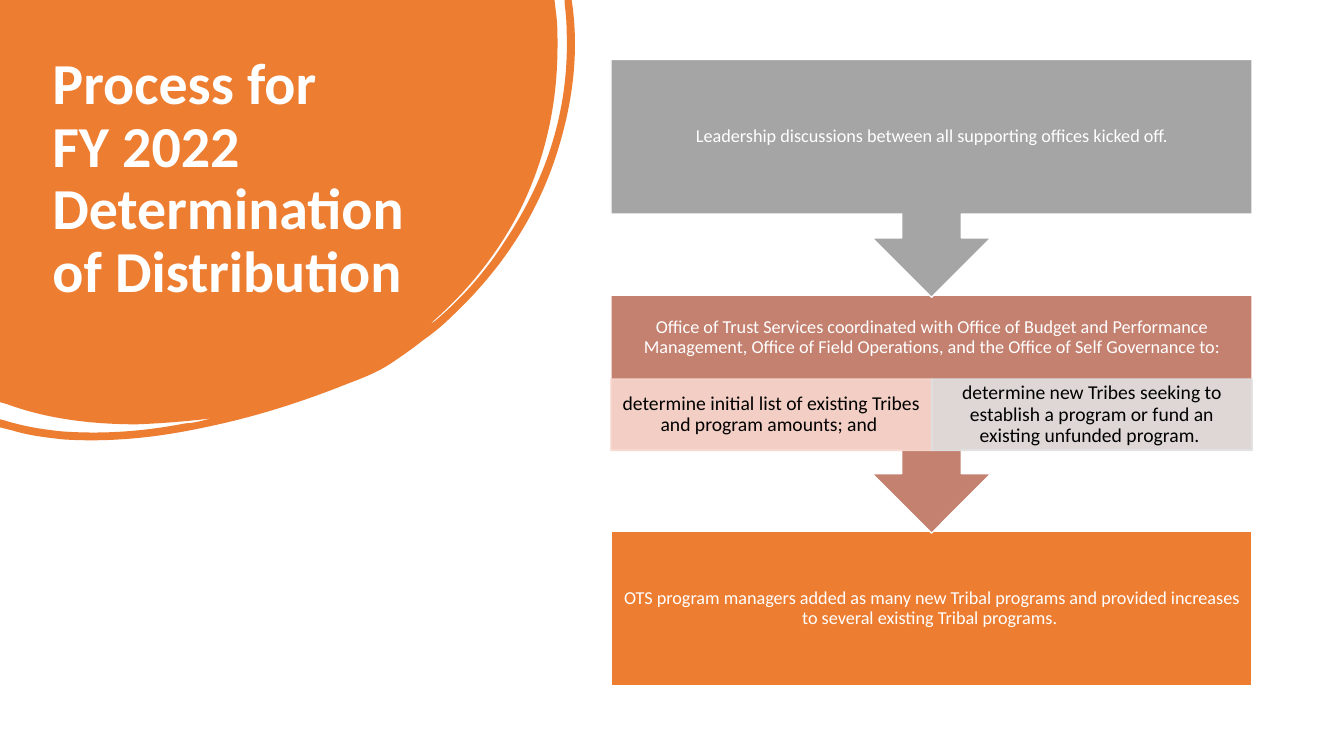
from dataclasses import dataclass

from lxml.etree import SubElement
from pptx import Presentation
from pptx.dml.color import RGBColor
from pptx.enum.shapes import MSO_SHAPE as Shape
from pptx.enum.text import MSO_ANCHOR as Anchor, MSO_AUTO_SIZE as AutoSize, PP_ALIGN as Align
from pptx.oxml.ns import qn
from pptx.util import Inches, Pt

TITLE = "Process for \vFY 2022 \vDetermination of Distribution"
# Each step: wording, colour name, details as (wording, colour name)
STEPS = [
    ("Leadership discussions between all supporting offices kicked off.", "gray", []),
    ("Office of Trust Services coordinated with Office of Budget and Performance "
     "Management, Office of Field Operations, and the Office of Self Governance to:", "rust", [
         ("determine initial list of existing Tribes and program amounts; and ", "pale_rust"),
         ("determine new Tribes seeking to establish a program or fund an existing "
          "unfunded program. ", "pale_gray")]),
    ("OTS program managers added as many new Tribal programs and provided increases "
     "to several existing Tribal programs. ", "orange", []),
]
# Outline of the corner blob: a pair is a line end, six numbers are a Bézier curve
BLOB_SIZE = (5.71, 4.37)
BLOB = [
    (0, 0), (5.5, 0), (5.52, 0.17),
    (5.53, 0.26, 5.53, 0.36, 5.53, 0.45), (5.53, 1.01, 5.42, 1.54, 5.18, 2.04),
    (4.96, 2.49, 4.65, 2.88, 4.27, 3.21), (4.29, 3.21, 4.3, 3.19, 4.32, 3.18),
    (4.59, 2.95, 4.82, 2.69, 5.01, 2.39), (5.43, 1.76, 5.65, 1.07, 5.62, 0.3),
    (5.62, 0.21, 5.61, 0.12, 5.6, 0.03), (5.6, 0), (5.67, 0), (5.68, 0.07),
    (5.74, 0.54, 5.68, 1.02, 5.53, 1.5), (5.33, 2.14, 4.97, 2.68, 4.48, 3.14),
    (4.39, 3.23, 4.29, 3.31, 4.19, 3.38), (4.09, 3.46, 3.99, 3.53, 3.87, 3.61),
    (3.75, 3.69, 3.6, 3.75, 3.44, 3.81), (2.99, 3.99, 2.52, 4.14, 2.03, 4.24),
    (1.57, 4.34, 1.1, 4.39, 0.63, 4.36), (0.45, 4.34, 0.28, 4.32, 0.12, 4.27),
    (0, 4.24), (0, 4.16), (0.04, 4.17),
    (0.23, 4.23, 0.42, 4.26, 0.61, 4.28), (1.03, 4.31, 1.43, 4.28, 1.84, 4.2),
    (1.89, 4.2, 1.93, 4.19, 1.98, 4.18), (2.02, 4.17, 2.06, 4.16, 2.1, 4.15),
    (1.86, 4.18, 1.61, 4.2, 1.36, 4.21), (0.92, 4.21, 0.48, 4.16, 0.07, 4.01), (0, 3.99),
]


@dataclass(frozen=True)
class Theme:
    font: str = "Calibri"
    title_size: float = 41.4
    step_size: float = 13
    detail_size: float = 14
    spacing: float = 0.9
    white: str = "FFFFFF"
    black: str = "000000"
    orange: str = "ED7D31"
    rust: str = "C48170"
    gray: str = "A5A5A5"
    pale_rust: str = "F8D7CE"
    pale_gray: str = "E1E1E1"

    def color(self, name):
        return RGBColor.from_string(getattr(self, name))


THEME = Theme()
LEFT, TOP, WIDTH = 6.06, 0.59, 6.36
PITCH, BODY, CALLOUT = 2.34, 1.53, 2.36
HEAD, DETAIL = 0.83, 0.71


def write(frame, text, size, color, align=Align.CENTER, bold=False):
    frame.text = text
    frame.word_wrap = True
    para = frame.paragraphs[0]
    para.alignment, para.line_spacing = align, THEME.spacing
    font = para.font
    font.name, font.size, font.bold = THEME.font, Pt(size), bold
    font.color.rgb = THEME.color(color)


def add_box(page, kind, place, text, size, ink, fill, edge, insets):
    box = page.shapes.add_shape(kind, *map(Inches, place))
    box.shadow.inherit = False
    box.fill.solid()
    box.fill.fore_color.rgb = THEME.color(fill)
    box.line.color.rgb = THEME.color(edge)
    box.line.width = Pt(1)
    frame = box.text_frame
    write(frame, text, size, ink)
    frame.vertical_anchor = Anchor.MIDDLE
    side, top, bottom = map(Inches, insets)
    frame.margin_left = frame.margin_right = side
    frame.margin_top, frame.margin_bottom = top, bottom
    return box


def make_translucent(box):
    for color in box.element.spPr.iter(qn("a:srgbClr")):
        SubElement(color, qn("a:alpha"), val="90000")


def add_step(page, index, text, color, details):
    top = TOP + index * PITCH
    last = index == len(STEPS) - 1
    kind, height = (Shape.RECTANGLE, BODY) if last else (Shape.DOWN_ARROW_CALLOUT, CALLOUT)
    bottom = 0.1 + (BODY - HEAD if details else 0)
    add_box(page, kind, (LEFT, top, WIDTH, height), text, THEME.step_size,
            "white", color, "white", (0.1, 0.1, bottom))
    for column, (detail, tint) in enumerate(details):
        width = WIDTH / len(details)
        place = (LEFT + column * width, top + HEAD, width, DETAIL)
        make_translucent(add_box(page, Shape.RECTANGLE, place, detail, THEME.detail_size,
                                 "black", tint, tint, (0.11, 0.02, 0.02)))


def draw_outline(blob, outline):
    """Give a freeform an outline of lines and Bézier curves."""
    route = next(blob.element.iter(qn("a:path")))
    for step in list(route):
        route.remove(step)
    for index, part in enumerate(outline):
        tag = "a:moveTo" if index == 0 else "a:lnTo" if len(part) == 2 else "a:cubicBezTo"
        step = SubElement(route, qn(tag))
        for x, y in zip(part[::2], part[1::2]):
            SubElement(step, qn("a:pt"), x=str(int(Inches(x))), y=str(int(Inches(y))))
    SubElement(route, qn("a:close"))


def add_blob(page):
    right, bottom = map(Inches, BLOB_SIZE)
    builder = page.shapes.build_freeform(0, 0)
    builder.add_line_segments([(right, 0), (right, bottom)], close=True)
    blob = builder.convert_to_shape()
    draw_outline(blob, BLOB)
    blob.shadow.inherit = False
    blob.fill.solid()
    blob.fill.fore_color.rgb = THEME.color("orange")
    blob.line.fill.background()


def place_title(page):
    title = page.shapes.title
    title.left, title.top, title.width, title.height = map(Inches, (0.42, 0.49, 3.81, 2.74))
    frame = title.text_frame
    write(frame, TITLE, THEME.title_size, "white", Align.LEFT, bold=True)
    frame.vertical_anchor, frame.auto_size = Anchor.TOP, AutoSize.NONE
    title.element.getparent().append(title.element)  # bring in front of the blob


def main():
    deck = Presentation()
    deck.slide_width, deck.slide_height = Inches(13.33), Inches(7.5)
    page = deck.slides.add_slide(deck.slide_layouts.get_by_name("Title Only"))
    add_blob(page)
    place_title(page)
    for index, step in reversed(list(enumerate(STEPS))):
        add_step(page, index, *step)
    deck.save("out.pptx")


if __name__ == "__main__":
    main()
